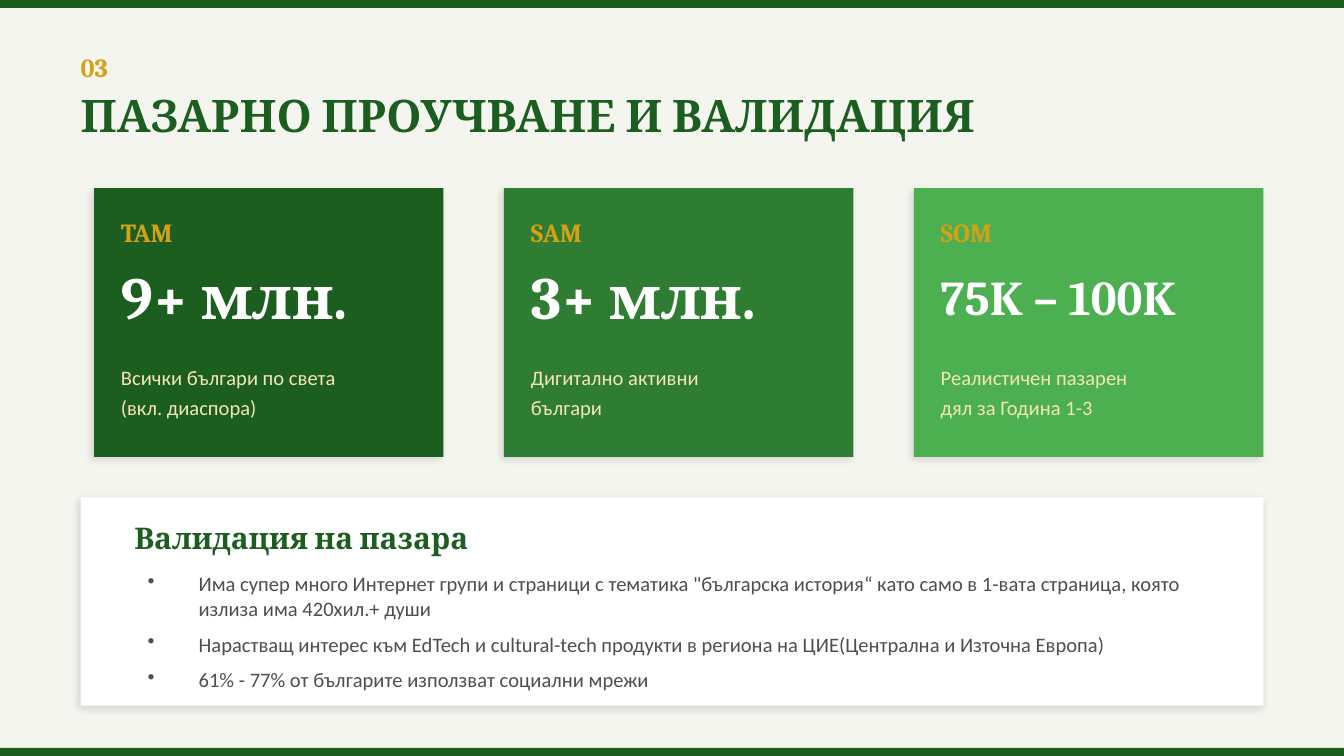
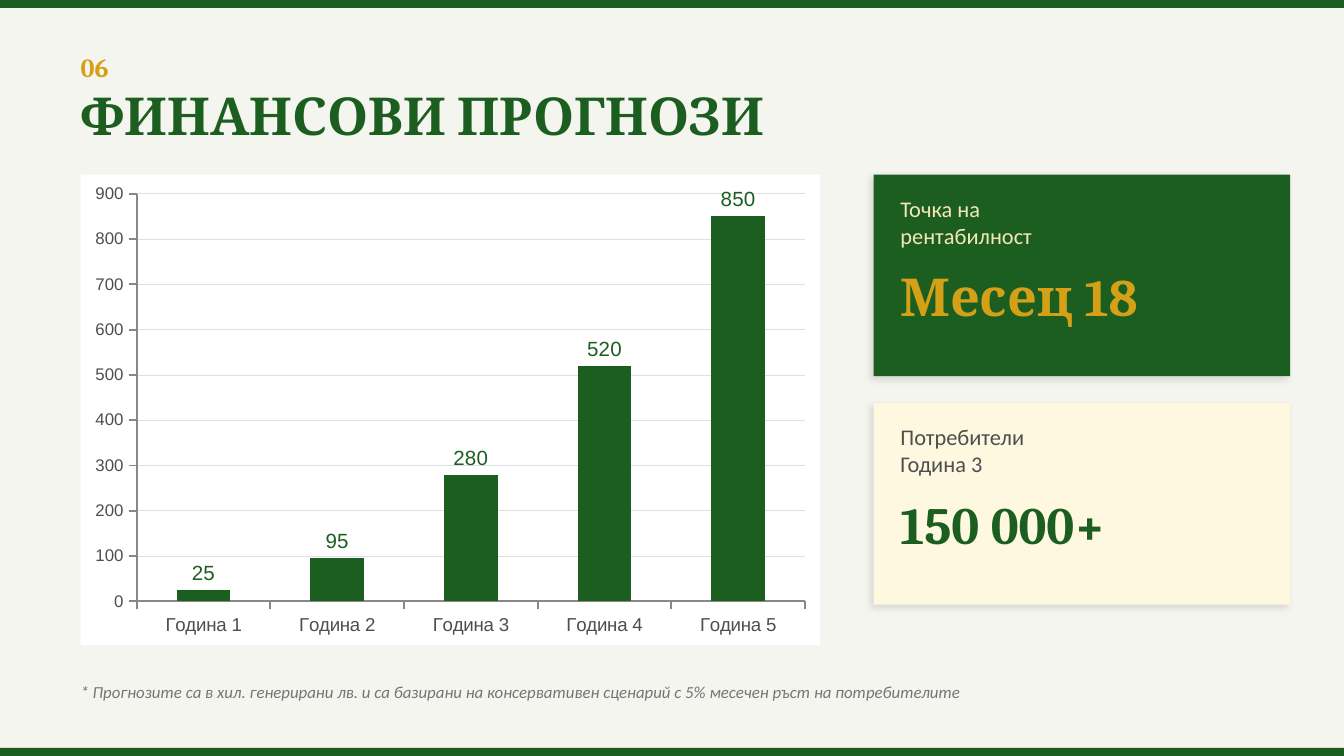
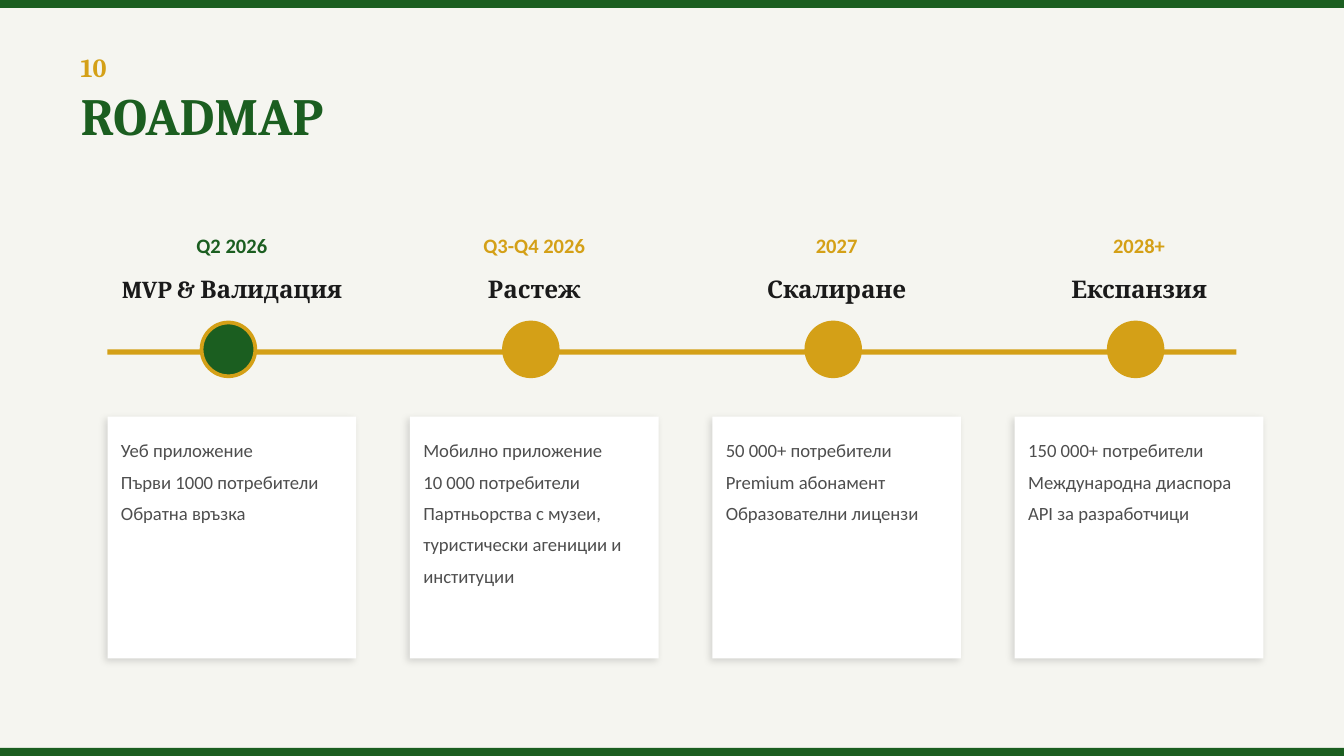
from lxml.etree import SubElement
from pptx import Presentation
from pptx.chart.data import CategoryChartData
from pptx.dml.color import RGBColor
from pptx.enum.chart import XL_CHART_TYPE, XL_LABEL_POSITION, XL_TICK_LABEL_POSITION, XL_TICK_MARK
from pptx.enum.shapes import MSO_SHAPE
from pptx.enum.text import MSO_ANCHOR, MSO_AUTO_SIZE, PP_ALIGN
from pptx.oxml import parse_xml
from pptx.oxml.ns import nsdecls, qn
from pptx.util import Inches, Pt

# Grid: square cells, 100 columns by 56.25 rows
COLUMNS, ROWS, CELL = 100, 56.25, 0.1

# Palette and fonts
GREEN, MID_GREEN, LIGHT_GREEN = "1B5E20", "2E7D32", "4CAF50"
GOLD, SAND, CREAM, PAPER, WHITE = "D4A017", "F5E6B8", "FFF8E1", "F5F5F0", "FFFFFF"
INK, TEXT_GRAY, NOTE_GRAY, AXIS_GRAY, GRID_GRAY = "1A1A1A", "4E4E4E", "757575", "888888", "E0E0E0"
HEADING, BODY, CHART_FONT = "Cambria", "Calibri", "Arial"

SHADOW = (
    f'<a:effectLst {nsdecls("a")}><a:outerShdw blurRad="{Pt(4)}" dist="{Pt(2)}" dir="8100000" '
    'algn="bl" rotWithShape="0"><a:srgbClr val="000000"><a:alpha val="12000"/></a:srgbClr>'
    "</a:outerShdw></a:effectLst>"
)
CHART_FILL = (
    f'<c:spPr {nsdecls("c", "a")}><a:solidFill><a:srgbClr val="{WHITE}"/></a:solidFill>'
    "<a:ln><a:noFill/></a:ln></c:spPr>"
)


def color(value):
    return RGBColor.from_string(value)


def apply(target, values):
    for name, value in values.items():
        setattr(target, name, value)


def paint(fill, value):
    fill.solid()
    fill.fore_color.rgb = color(value)


def set_font(font, size, value, name=BODY, bold=False, italic=False):
    apply(font, {"name": name, "size": Pt(size), "bold": bold, "italic": italic})
    font.color.rgb = color(value)


def set_line(line, value, width):
    line.color.rgb = color(value)
    line.width = Pt(width)


def grid(*cells):
    return [Inches(cell * CELL) for cell in cells]


class SlideBuilder:
    """Holds the deck's style and the page being filled."""

    def __init__(self):
        self.deck = Presentation()
        self.deck.slide_width, self.deck.slide_height = grid(COLUMNS, ROWS)
        paint(self.deck.slide_master.background.fill, PAPER)
        self.page = None

    def new_page(self, number, title, title_size=28):
        self.page = self.deck.slides.add_slide(self.deck.slide_layouts[5])
        band = 0.6
        for top in (0, ROWS - band):
            self.shape((0, top, COLUMNS, band), GREEN)
        self.text((6, 2.5, 6, 5), [number], 14, GOLD, name=HEADING, bold=True)
        heading = self.page.shapes.title
        places = zip(("left", "top", "width", "height"), grid(6, 5.5, 88, 6))
        apply(heading, dict(places))
        self.fill_text(heading, [title], title_size, GREEN, name=HEADING, bold=True)

    def shape(self, place, fill, kind=MSO_SHAPE.RECTANGLE, outline=None):
        box = self.page.shapes.add_shape(kind, *grid(*place))
        box.shadow.inherit = False
        paint(box.fill, fill)
        if outline:
            set_line(box.line, outline, 2)
        else:
            box.line.fill.background()
        return box

    def card(self, place, fill):
        properties = self.shape(place, fill)._element.spPr
        properties.replace(properties.find(qn("a:effectLst")), parse_xml(SHADOW))

    def text(self, place, lines, size, value, **style):
        box = self.page.shapes.add_textbox(*grid(*place))
        self.fill_text(box, lines, size, value, **style)

    def fill_text(self, box, lines, size, value, align=PP_ALIGN.LEFT, anchor=MSO_ANCHOR.MIDDLE,
                  spacing=None, bullets=False, **font):
        frame = box.text_frame
        apply(frame, {"word_wrap": True, "auto_size": MSO_AUTO_SIZE.NONE, "vertical_anchor": anchor})
        if not bullets:
            sides = ("left", "top", "right", "bottom")
            apply(frame, {f"margin_{side}": 0 for side in sides})
        for index, line in enumerate(lines):
            para = frame.add_paragraph() if index else frame.paragraphs[0]
            apply(para, {"alignment": align, "line_spacing": spacing})
            if bullets:
                self.bullet(para, last=index == len(lines) - 1)
            span = para.add_run()
            span.text = line
            set_font(span.font, size, value, **font)

    def bullet(self, para, last):
        if not last:
            para.space_after = Pt(6)
        properties = para._p.get_or_add_pPr()
        indent = Inches(0.38)
        properties.set("marL", str(indent))
        properties.set("indent", str(-indent))
        SubElement(properties, qn("a:buChar")).set("char", "•")

    def column_chart(self, place, categories, values):
        data = CategoryChartData()
        data.categories = categories
        data.add_series("Series 1", values)
        frame = self.page.shapes.add_chart(XL_CHART_TYPE.COLUMN_CLUSTERED, *grid(*place), data)
        chart = frame.chart
        apply(chart, {"has_legend": False, "has_title": False})
        set_font(chart.font, 10, "000000")
        chart._chartSpace.find(qn("c:txPr")).addprevious(parse_xml(CHART_FILL))

        # Axes
        for axis, size in ((chart.category_axis, 10), (chart.value_axis, 9)):
            apply(axis, {"major_tick_mark": XL_TICK_MARK.OUTSIDE, "minor_tick_mark": XL_TICK_MARK.NONE})
            set_font(axis.tick_labels.font, size, TEXT_GRAY, CHART_FONT)
            set_line(axis.format.line, AXIS_GRAY, 1)
        chart.category_axis.tick_label_position = XL_TICK_LABEL_POSITION.LOW
        apply(chart.value_axis, {"minimum_scale": 0, "maximum_scale": 900, "major_unit": 100})
        set_line(chart.value_axis.major_gridlines.format.line, GRID_GRAY, 0.5)

        # Columns and their labels
        plot = chart.plots[0]
        apply(plot, {"gap_width": 150, "vary_by_categories": False, "has_data_labels": True})
        paint(plot.series[0].format.fill, GREEN)
        labels = plot.data_labels
        apply(labels, {"show_value": True, "number_format": "#,##0",
                       "number_format_is_linked": False, "position": XL_LABEL_POSITION.OUTSIDE_END})
        set_font(labels.font, 11, GREEN, CHART_FONT)


def market_page(builder):
    builder.new_page("03", "ПАЗАРНО ПРОУЧВАНЕ И ВАЛИДАЦИЯ", 24)

    # Market size cards
    markets = [
        ("TAM", "9+ млн.", 32, ["Всички българи по света", "(вкл. диаспора)"], GREEN),
        ("SAM", "3+ млн.", 32, ["Дигитално активни", "българи"], MID_GREEN),
        ("SOM", "75K – 100K", 26, ["Реалистичен пазарен", "дял за Година 1-3"], LIGHT_GREEN),
    ]
    for index, (label, figure, size, description, fill) in enumerate(markets):
        left = 7 + 30.5 * index
        builder.card((left, 14, 26, 20), fill)
        builder.text((left + 2, 15.5, 22, 3.5), [label], 14, GOLD, name=HEADING, bold=True)
        builder.text((left + 2, 19, 22, 6), [figure], size, WHITE, name=HEADING, bold=True)
        builder.text((left + 2, 25.5, 22, 7), description, 11, SAND, spacing=1.2)

    # Validation panel
    builder.card((6, 37, 88, 15.5), WHITE)
    builder.text((10, 38, 40, 4), ["Валидация на пазара"], 16, GREEN, name=HEADING, bold=True)
    evidence = [
        "Има супер много Интернет групи и страници с тематика \"българска история“ "
        "като само в 1-вата страница, която излиза има 420хил.+ души",
        "Нарастващ интерес към EdTech и cultural-tech продукти в региона на "
        "ЦИЕ(Централна и Източна Европа)",
        "61% - 77% от българите използват социални мрежи",
    ]
    builder.text((10, 42, 82, 10), evidence, 11, TEXT_GRAY, anchor=MSO_ANCHOR.TOP, bullets=True)


def finance_page(builder):
    builder.new_page("06", "ФИНАНСОВИ ПРОГНОЗИ")
    years = [f"Година {year}" for year in range(1, 6)]
    builder.column_chart((6, 13, 55, 35), years, [25, 95, 280, 520, 850])

    # Key figure cards
    figures = [
        (["Точка на", "рентабилност"], "Месец 18", GREEN, SAND, GOLD),
        (["Потребители", "Година 3"], "150 000+", CREAM, TEXT_GRAY, GREEN),
    ]
    for index, (label, figure, fill, label_color, figure_color) in enumerate(figures):
        top = 13 + 17 * index
        builder.card((65, top, 31, 15), fill)
        builder.text((67, top + 1, 27, 5), label, 12, label_color)
        builder.text((67, top + 6, 27, 6), [figure], 28, figure_color, name=HEADING, bold=True)

    note = ("* Прогнозите са в хил. генерирани лв. и са базирани на консервативен сценарий "
            "с 5% месечен ръст на потребителите")
    builder.text((6, 50, 88, 3), [note], 9, NOTE_GRAY, italic=True)


def roadmap_page(builder):
    builder.new_page("10", "ROADMAP")
    builder.shape((8, 26, 84, 0.4), GOLD)

    # Stages along the timeline
    stages = [
        ("Q2 2026", "MVP & Валидация", GREEN,
         ["Уеб приложение", "Първи 1000 потребители", "Обратна връзка"]),
        ("Q3-Q4 2026", "Растеж", GOLD,
         ["Мобилно приложение", "10 000 потребители",
          "Партньорства с музеи, туристически агениции и институции"]),
        ("2027", "Скалиране", GOLD,
         ["50 000+ потребители", "Premium абонамент", "Образователни лицензи"]),
        ("2028+", "Експанзия", GOLD,
         ["150 000+ потребители", "Международна диаспора", "API за разработчици"]),
    ]
    width = 18.5
    centered = {"align": PP_ALIGN.CENTER, "bold": True}
    for index, (period, stage, accent, goals) in enumerate(stages):
        left = 8 + 22.5 * index
        builder.shape((left + 7, 24, 4, 4), accent, MSO_SHAPE.OVAL, outline=GOLD)
        builder.text((left, 16.5, width, 3.5), [period], 11, accent, **centered)
        builder.text((left, 19.5, width, 4), [stage], 13, INK, name=HEADING, **centered)
        builder.card((left, 31, width, 18), WHITE)
        builder.text((left + 1, 32, width - 2, 16), goals, 10, TEXT_GRAY,
                     anchor=MSO_ANCHOR.TOP, spacing=1.4)


def main():
    builder = SlideBuilder()
    for build_page in (market_page, finance_page, roadmap_page):
        build_page(builder)
    builder.deck.save("out.pptx")


if __name__ == "__main__":
    main()
